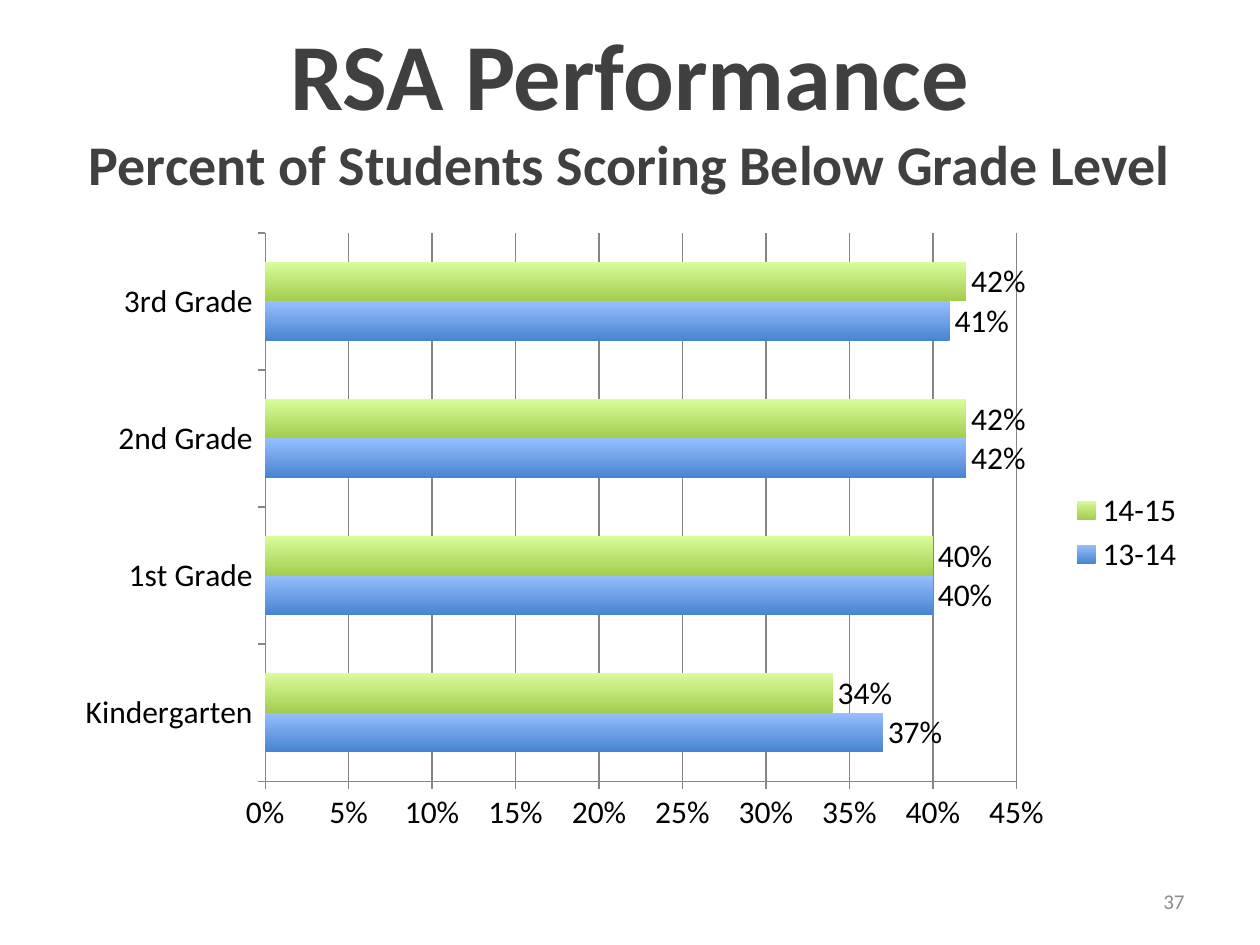
import pptx
import pptx.chart.data
import pptx.dml.color
import pptx.enum.chart
import pptx.enum.text
import pptx.util

FONT = "Calibri"
WIDTH, HEIGHT = 10, 7.5
AXIS_GRAY = "868686"

HEADINGS = [("RSA Performance", 54), ("Percent of Students Scoring Below Grade Level", 32)]
PAGE_NUMBER = "37"
GRADES = ["Kindergarten", "1st Grade", "2nd Grade", "3rd Grade"]
# School year, shares below grade level, bottom and top colours of the bars
YEARS = [
    ("13-14", [0.37, 0.40, 0.42, 0.41], ("4784D1", "97BFFE")),
    ("14-15", [0.34, 0.40, 0.42, 0.42], ("A3CD4E", "D9FC9C")),
]


def color(value):
    return pptx.dml.color.RGBColor.from_string(value)


def box(left, top, width, height):
    """Turn shares of the slide's size into lengths."""
    return [pptx.util.Inches(round(share * size, 2)) for share, size in
            ((left, WIDTH), (top, HEIGHT), (width, WIDTH), (height, HEIGHT))]


def set_font(font, size, value, bold=False):
    font.name = FONT
    font.size = pptx.util.Pt(size)
    font.bold = bold
    font.color.rgb = color(value)


def add_text(slide, place, lines, value, alignment, anchor, bold=False):
    frame = slide.shapes.add_textbox(*place).text_frame
    frame.word_wrap = True
    frame.vertical_anchor = anchor
    for index, (text, size) in enumerate(lines):
        paragraph = frame.add_paragraph() if index else frame.paragraphs[0]
        paragraph.text = text
        paragraph.alignment = alignment
        set_font(paragraph.font, size, value, bold)


def add_chart(slide, place):
    data = pptx.chart.data.CategoryChartData(number_format="0%")
    data.categories = GRADES
    for name, values, _ in YEARS:
        data.add_series(name, values)
    chart = slide.shapes.add_chart(
        pptx.enum.chart.XL_CHART_TYPE.BAR_CLUSTERED, *place, data).chart
    set_font(chart.font, 18, "000000")
    chart.has_title = False

    # Legend
    chart.has_legend = True
    chart.legend.position = pptx.enum.chart.XL_LEGEND_POSITION.RIGHT
    chart.legend.include_in_layout = False

    # Axes and gridlines
    value_axis = chart.value_axis
    value_axis.minimum_scale, value_axis.maximum_scale = 0, 0.45
    value_axis.major_unit = 0.05
    value_axis.tick_labels.number_format = "0%"
    value_axis.tick_labels.number_format_is_linked = False
    value_axis.has_major_gridlines = True
    for axis in (chart.category_axis, value_axis):
        axis.major_tick_mark = pptx.enum.chart.XL_TICK_MARK.OUTSIDE
    for part in (chart.category_axis, value_axis, value_axis.major_gridlines):
        part.format.line.color.rgb = color(AXIS_GRAY)
        part.format.line.width = pptx.util.Pt(0.75)

    # Bars and their labels
    plot = chart.plots[0]
    plot.gap_width = 150
    plot.vary_by_categories = False
    for series, (_, _, shades) in zip(plot.series, YEARS):
        fill = series.format.fill
        fill.gradient()
        fill.gradient_angle = 90
        for stop, position, shade in zip(fill.gradient_stops, (0, 1), shades):
            stop.position = position
            stop.color.rgb = color(shade)
        labels = series.data_labels
        labels.show_value = True
        labels.number_format = "0%"
        labels.number_format_is_linked = False
        labels.position = pptx.enum.chart.XL_LABEL_POSITION.OUTSIDE_END


def main():
    presentation = pptx.Presentation()
    presentation.slide_width = pptx.util.Inches(WIDTH)
    presentation.slide_height = pptx.util.Inches(HEIGHT)
    slide = presentation.slides.add_slide(presentation.slide_layouts[6])
    align = pptx.enum.text.PP_ALIGN
    anchor = pptx.enum.text.MSO_ANCHOR

    # Page number, headings, chart
    add_text(slide, box(0.717, 0.927, 0.233, 0.053), [(PAGE_NUMBER, 12)],
             "8C8C8C", align.RIGHT, anchor.MIDDLE)
    add_text(slide, box(0, 0.011, 1, 0.156), HEADINGS,
             "404040", align.CENTER, anchor.TOP, bold=True)
    add_chart(slide, box(0.05, 0.2333, 0.9, 0.66))
    presentation.save("out.pptx")


if __name__ == "__main__":
    main()
